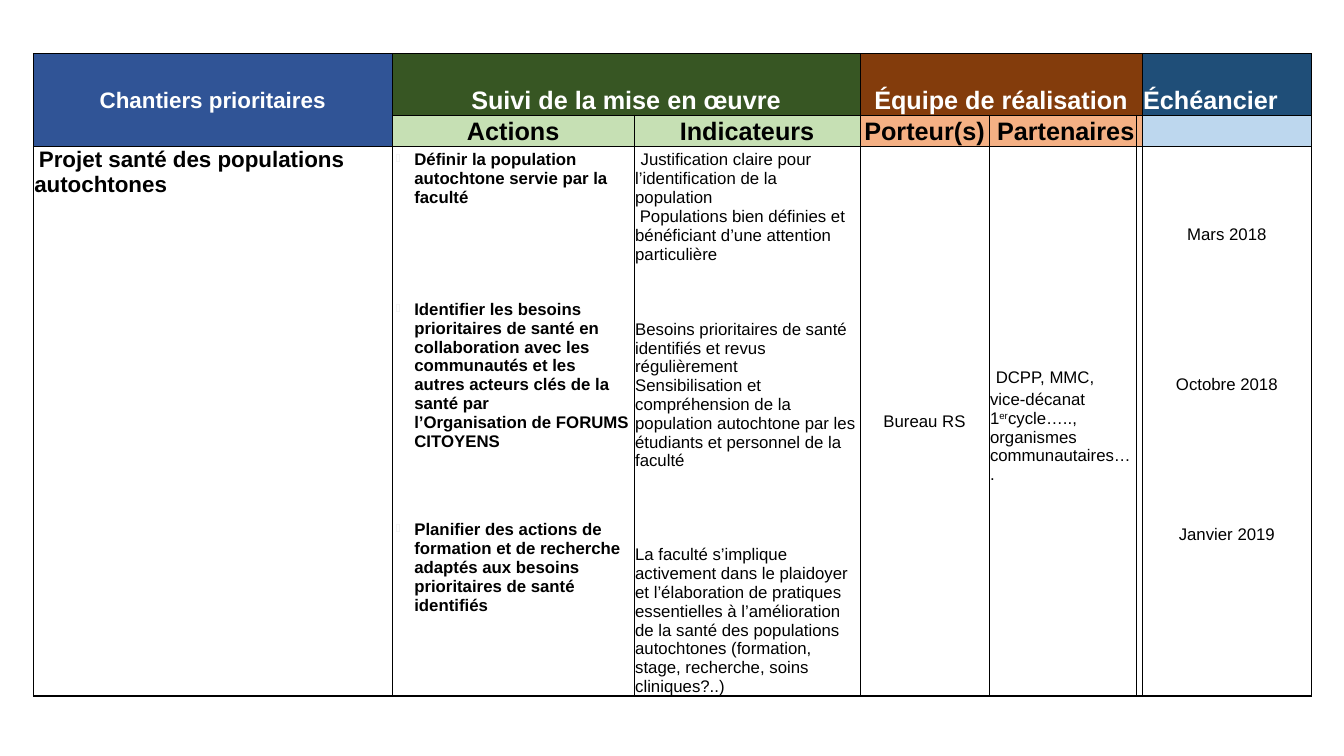
import pptx
import pptx.dml.color
import pptx.enum.text
import pptx.oxml.ns
import pptx.util
from lxml import etree

Inches, Pt = pptx.util.Inches, pptx.util.Pt
ANCHOR = pptx.enum.text.MSO_ANCHOR
ALIGN = pptx.enum.text.PP_ALIGN
qn = pptx.oxml.ns.qn

LINE = 13.4  # height of one 12 pt line, in points


def rgb(hex_color):
    return pptx.dml.color.RGBColor.from_string(hex_color)


def sub(parent, tag, **attrs):
    return etree.SubElement(parent, qn(tag), attrs)


class Deck:
    font = "Arial"
    ink = "000000"
    bullet_color = "E7E6E6"

    def __init__(self, width, height):
        self.prs = pptx.Presentation()
        self.prs.slide_width, self.prs.slide_height = Inches(width), Inches(height)
        self.s = self.prs.slides.add_slide(self.prs.slide_layouts[6])

    def table(self, left, top, cols, rows):
        sp = self.s.shapes.add_table(len(rows), len(cols), Inches(left), Inches(top),
                                     Inches(sum(cols)), Inches(sum(rows)))
        tbl = sp.table
        tbl.first_row = tbl.horz_banding = False
        for col, width in zip(tbl.columns, cols):
            col.width = Inches(width)
        for row, height in zip(tbl.rows, rows):
            row.height = Inches(height)
        return tbl

    def cell(self, c, fill=None, anchor=ANCHOR.MIDDLE, insets=(0.01, 0.01, 0.01, 0)):
        fmt = dict(zip(("margin_left", "margin_top", "margin_right", "margin_bottom"),
                       map(Inches, insets)), vertical_anchor=anchor)
        for name, value in fmt.items():
            setattr(c, name, value)
        if fill:
            c.fill.solid()
            c.fill.fore_color.rgb = rgb(fill)
        else:
            c.fill.background()

    def borders(self, c, **widths):
        tcPr = c._tc.get_or_add_tcPr()
        for i, side in enumerate("LRTB"):
            ln = etree.Element(qn("a:ln" + side), w=str(Pt(widths.get(side, 0.5))))
            sub(sub(ln, "a:solidFill"), "a:srgbClr", val=self.ink)
            tcPr.insert(i, ln)

    def paragraph(self, c, runs, align=ALIGN.LEFT, before=0, bullet=False, **base):
        """Add a paragraph; runs is a text or a list of (text, format) pairs."""
        tf = c.text_frame
        p = tf.paragraphs[0] if not c.text else tf.add_paragraph()
        p.alignment, p.space_before = align, Pt(before)
        if bullet:
            self.bullet(p)
        for text, own in [(runs, {})] if isinstance(runs, str) else runs:
            fmt = {"size": 12, "bold": False, "name": self.font, "color": self.ink, **base, **own}
            for i, part in enumerate(text.split("\n")):
                if i:
                    p.add_line_break()
                    sub(p._p[-1], "a:rPr", sz=str(fmt["size"] * 100))
                self.run(p, part, **fmt)

    def run(self, p, text, color, size, baseline=None, **fmt):
        r = p.add_run()
        r.text = text
        for name, value in {**fmt, "size": Pt(size)}.items():
            setattr(r.font, name, value)
        r.font.color.rgb = rgb(color)
        if baseline:
            r._r.get_or_add_rPr().set("baseline", str(baseline * 1000))

    def bullet(self, p):
        pPr = p._p.get_or_add_pPr()
        pPr.set("marL", str(Inches(0.18)))
        pPr.set("indent", str(Inches(-0.18)))
        sub(sub(pPr, "a:buClr"), "a:srgbClr", val=self.bullet_color)
        sub(pPr, "a:buSzPct", val="70000")
        sub(pPr, "a:buChar", char="⬥")


def main():
    deck = Deck(13.33, 7.5)
    tbl = deck.table(0.33, 0.53, [3.56, 2.4, 2.24, 1.28, 1.46, 0.04, 1.68], [0.61, 0.29, 5.26])
    last = len(tbl.columns) - 1

    # Cell fills, insets and borders
    blue, green, brown, navy = "305496", "375623", "833C0C", "1F4E78"
    pale_green, orange, pale_blue = "C6E0B4", "F4B084", "BDD7EE"
    fills = [
        [blue, green, green, brown, brown, brown, navy],
        [blue, pale_green, pale_green, orange, orange, orange, pale_blue],
        [None] * 7,
    ]
    for i, row in enumerate(fills):
        for j, fill in enumerate(row):
            c = tbl.cell(i, j)
            anchor = ANCHOR.BOTTOM if i == 0 and j else ANCHOR.MIDDLE
            if i == 2 and j < 3:
                anchor = ANCHOR.TOP
            deck.cell(c, fill, anchor)
            deck.borders(c, **({"T": 1, "B": 2} if i == 2 else {}))
    tbl.cell(0, 0).merge(tbl.cell(1, 0))
    tbl.cell(0, 1).merge(tbl.cell(0, 2))
    tbl.cell(0, 3).merge(tbl.cell(0, 5))

    # Header rows
    headers = [
        (0, 0, "Chantiers prioritaires", ALIGN.CENTER, 16, "FFFFFF"),
        (0, 1, "Suivi de la mise en œuvre", ALIGN.CENTER, 18, "FFFFFF"),
        (0, 3, "Équipe de réalisation", ALIGN.CENTER, 18, "FFFFFF"),
        (0, last, "Échéancier", ALIGN.LEFT, 18, "FFFFFF"),
        (1, 1, "Actions", ALIGN.CENTER, 18, deck.ink),
        (1, 2, "Indicateurs", ALIGN.CENTER, 18, deck.ink),
        (1, 3, "Porteur(s)", ALIGN.CENTER, 18, deck.ink),
        (1, 4, [(" ", {"bold": False}), ("Partenaires", {})], ALIGN.LEFT, 18, deck.ink),
    ]
    for i, j, text, align, size, color in headers:
        deck.paragraph(tbl.cell(i, j), text, align, size=size, color=color, bold=True)

    # Project
    project, actions, indicators, leader, partners, _, dates = (tbl.cell(2, j) for j in range(7))
    deck.paragraph(project, [(" ", {}),
                             ("Projet santé des populations autochtones", {"size": 16, "bold": True})])

    # Actions
    deck.cell(actions, anchor=ANCHOR.TOP, insets=[0.04] * 4)
    for before, text in [
        (0, "Définir la population autochtone servie par la faculté"),
        (66.5, "Identifier les besoins prioritaires de santé en collaboration avec les communautés "
               "et les autres acteurs clés de la santé par\nl’Organisation de FORUMS CITOYENS"),
        (50, "Planifier des actions de formation et de recherche adaptés aux besoins prioritaires "
             "de santé identifiés"),
    ]:
        deck.paragraph(actions, text, before=before, bullet=True, bold=True)

    # Indicators, with gaps counted in lines
    for gap, text in [
        (0, [(" ", {"size": 14}),
             ("Justification claire pour l’identification de la population", {})]),
        (0, " Populations bien définies et bénéficiant d’une attention particulière"),
        (3, "Besoins prioritaires de santé identifiés et revus régulièrement"),
        (0, "Sensibilisation et compréhension de la population autochtone par les étudiants "
            "et personnel de la faculté"),
        (4, "La faculté s’implique activement dans le plaidoyer et l’élaboration de pratiques "
            "essentielles à l’amélioration de la santé des populations autochtones (formation, "
            "stage, recherche, soins cliniques?..)"),
    ]:
        deck.paragraph(indicators, text, before=gap * LINE)

    # Team
    deck.paragraph(leader, "Bureau RS", ALIGN.CENTER)
    deck.paragraph(partners, [(" ", {"size": 18, "name": "Calibri"}), ("DCPP, MMC,", {})])
    deck.paragraph(partners, [("vice-décanat 1", {}), ("er", {"baseline": 30}),
                              ("cycle….., organismes communautaires….", {})])

    # Schedule
    deck.cell(dates, insets=(0.01, 0.01, 0.01, 0.74))
    for gap, text in [(0, "Mars 2018"), (7, "Octobre 2018"), (7, "Janvier 2019")]:
        deck.paragraph(dates, text, ALIGN.CENTER, before=gap * LINE)

    deck.prs.save("out.pptx")


if __name__ == "__main__":
    main()
